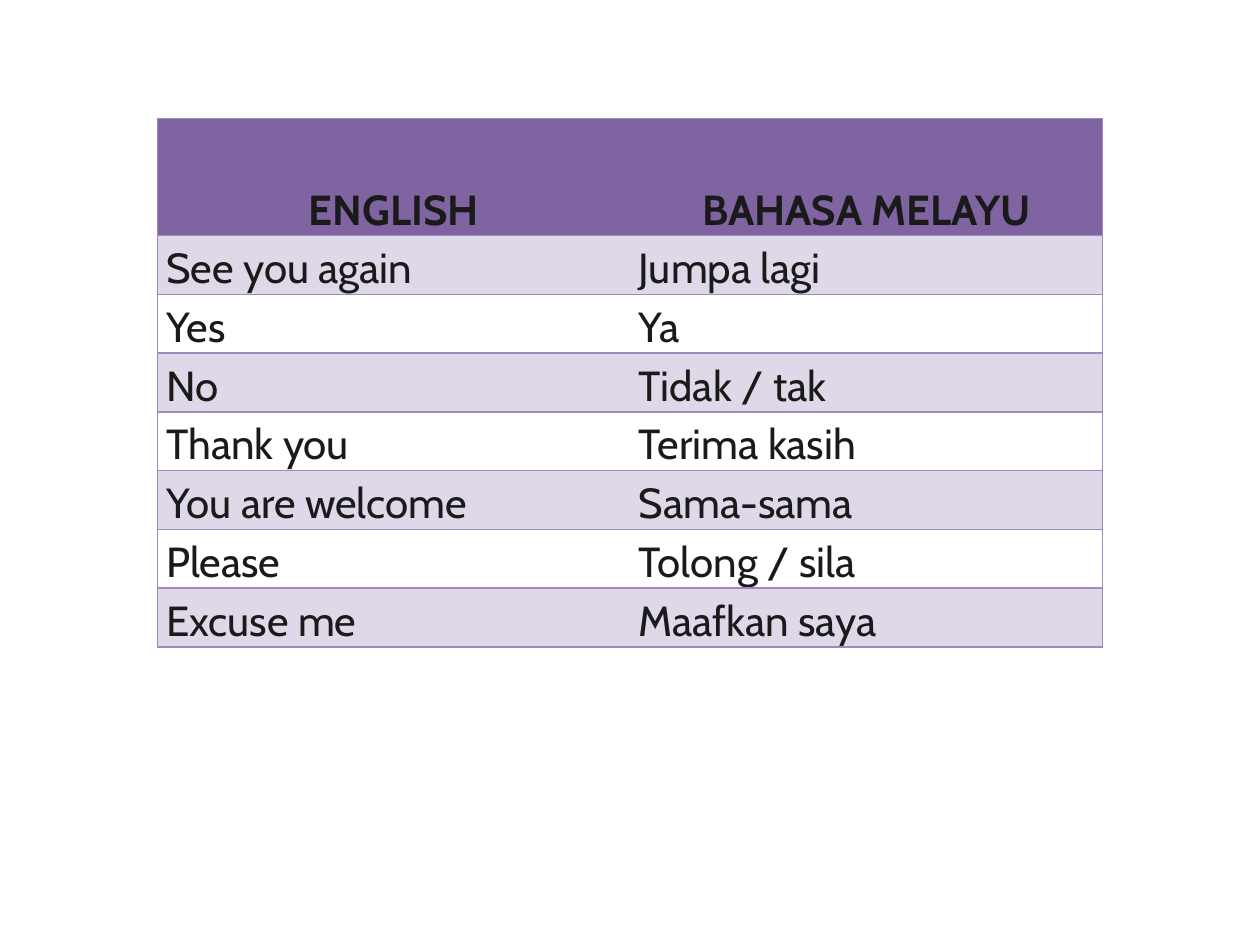
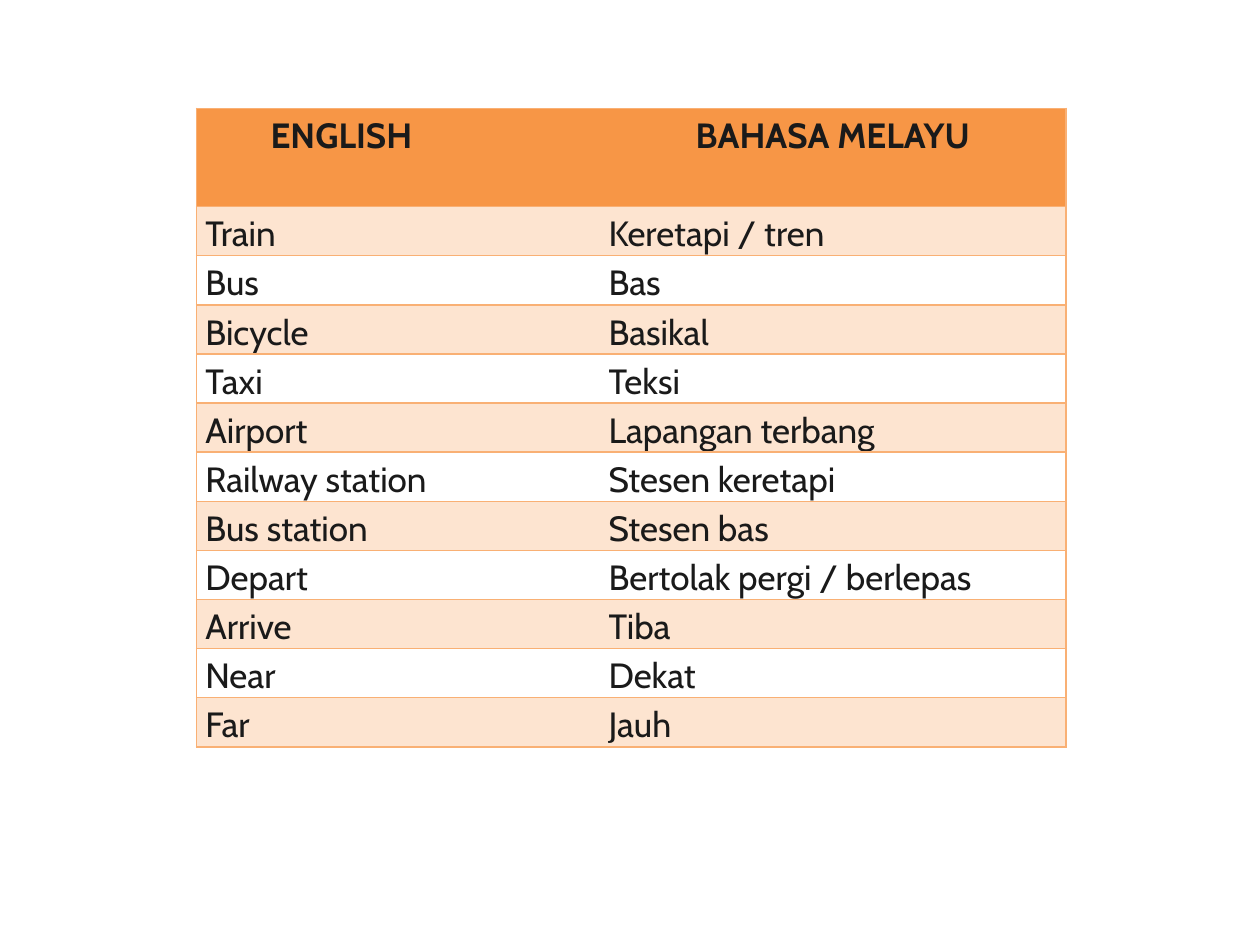
"""Build two English and Malay word tables."""
from dataclasses import dataclass

from lxml.etree import SubElement
from pptx import Presentation
from pptx.dml.color import RGBColor as RGB
from pptx.enum.text import MSO_ANCHOR as Anchor, PP_ALIGN as Align
from pptx.oxml.ns import qn
from pptx.util import Inches, Pt


@dataclass
class Theme:
    font: str = "Cabin"
    ink: str = "1A1A1A"
    lead: float = 1.15
    rule: float = 1
    pad: float = 0.07


THEME = Theme()
HEADS = ("ENGLISH", "BAHASA MELAYU")

TABLES = [
    dict(
        at=(1.25, 0.94), cols=(3.75, 3.75), head=0.93, row=0.46,
        size=24, anchor=Anchor.BOTTOM,
        dark="8064A2", pale="DFD8E8", line="9F8AB9",
        words=[
            ("See you again", "Jumpa lagi"),
            ("Yes", "Ya"),
            ("No", "Tidak / tak"),
            ("Thank you", "Terima kasih"),
            ("You are welcome", "Sama-sama"),
            ("Please", "Tolong / sila"),
            ("Excuse me", "Maafkan saya"),
        ],
    ),
    dict(
        at=(1.56, 0.86), cols=(2.3, 0.9, 3.7), head=0.78, row=0.39,
        size=20, anchor=Anchor.TOP,
        dark="F79646", pale="FDE4D0", line="F9B074",
        words=[
            ("Train", "Keretapi / tren"),
            ("Bus", "Bas"),
            ("Bicycle", "Basikal"),
            ("Taxi", "Teksi"),
            ("Airport", "Lapangan terbang"),
            ("Railway station", "Stesen keretapi"),
            ("Bus station", "Stesen bas"),
            ("Depart", "Bertolak pergi / berlepas"),
            ("Arrive", "Tiba"),
            ("Near", "Dekat"),
            ("Far", "Jauh"),
        ],
    ),
]


def edge(cell, sides, color):
    """Draw the named sides of a cell and clear the others."""
    props = cell._tc.get_or_add_tcPr()
    for side in "LRTB":
        line = SubElement(props, qn(f"a:ln{side}"), w=str(Pt(THEME.rule)))
        if side in sides:
            fill = SubElement(line, qn("a:solidFill"))
            SubElement(fill, qn("a:srgbClr"), val=color)
        else:
            SubElement(line, qn("a:noFill"))


def paint(cell, color):
    """Fill a cell, or leave it clear."""
    if color:
        cell.fill.solid()
        cell.fill.fore_color.rgb = RGB.from_string(color)
    else:
        cell.fill.background()


def write(cell, text, size, head):
    """Set the text of a cell and its type."""
    cell.margin_left = cell.margin_right = Inches(THEME.pad)
    cell.margin_top = cell.margin_bottom = 0
    para = cell.text_frame.paragraphs[0]
    para.text = text
    para.line_spacing = THEME.lead
    para.alignment = Align.CENTER if head else Align.LEFT
    para.font.size = Pt(size)
    for run in para.runs:
        font = run.font
        font.name, font.size, font.bold = THEME.font, Pt(size), head
        font.color.rgb = RGB.from_string(THEME.ink)


def draw(slide, data):
    """Add one word table to a slide."""
    cols = data["cols"]
    rows = [HEADS, *data["words"]]
    highs = [data["head"]] + [data["row"]] * len(data["words"])
    left, top = data["at"]
    table = slide.shapes.add_table(
        len(rows), len(cols), Inches(left), Inches(top),
        Inches(sum(cols)), Inches(sum(highs))).table
    table.first_row = table.horz_banding = False
    for col, wide in zip(table.columns, cols):
        col.width = Inches(wide)
    last = len(cols) - 1
    for r, (pair, high) in enumerate(zip(rows, highs)):
        table.rows[r].height = Inches(high)
        head = r == 0
        color = data["dark"] if head else data["pale"] if r % 2 else None
        texts = {0: pair[0], last: pair[1]}
        for c in range(len(cols)):
            cell = table.cell(r, c)
            write(cell, texts.get(c, ""), data["size"], head)
            cell.vertical_anchor = data["anchor"] if head else Anchor.TOP
            sides = "TB" + "L" * (c == 0) + "R" * (c == last)
            edge(cell, sides, data["line"])
            paint(cell, color)


def main():
    """Build and save the slides."""
    deck = Presentation()
    deck.slide_width, deck.slide_height = Inches(10), Inches(7.5)
    for data in TABLES:
        draw(deck.slides.add_slide(deck.slide_layouts[6]), data)
    deck.save("out.pptx")


if __name__ == "__main__":
    main()
